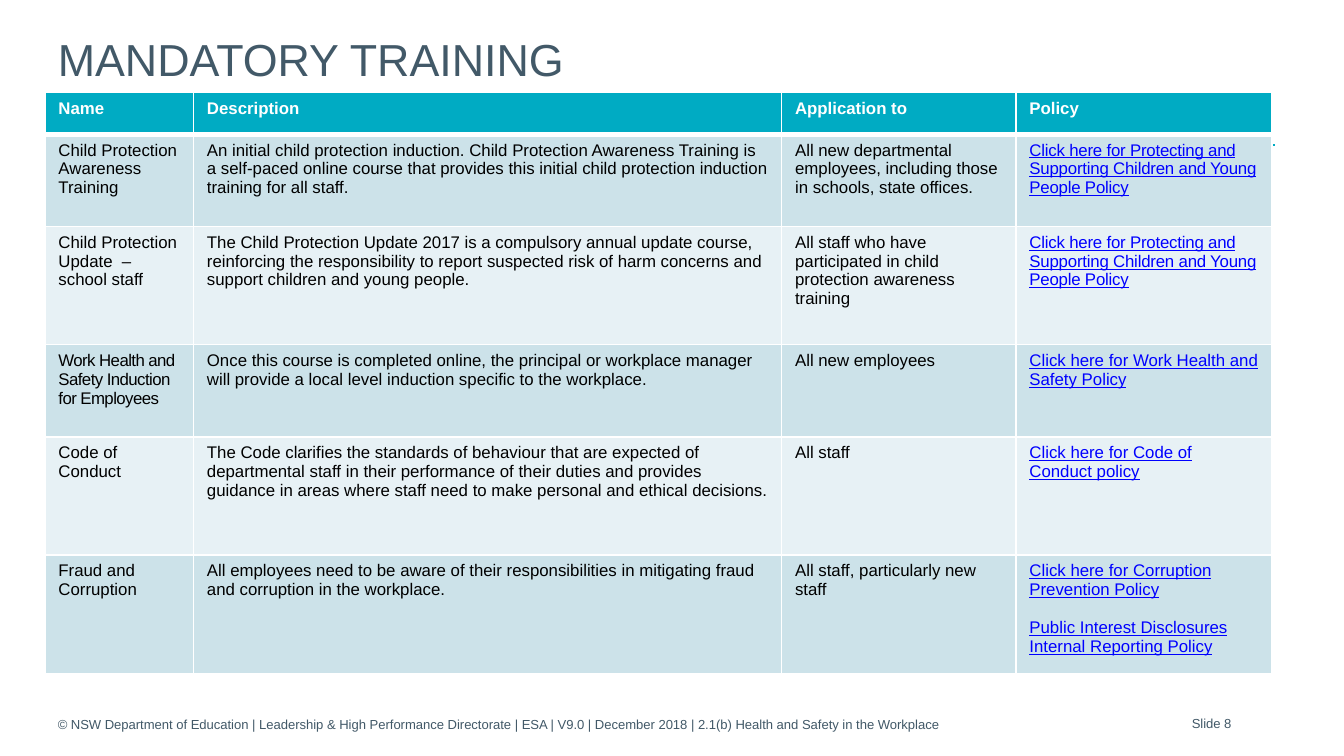
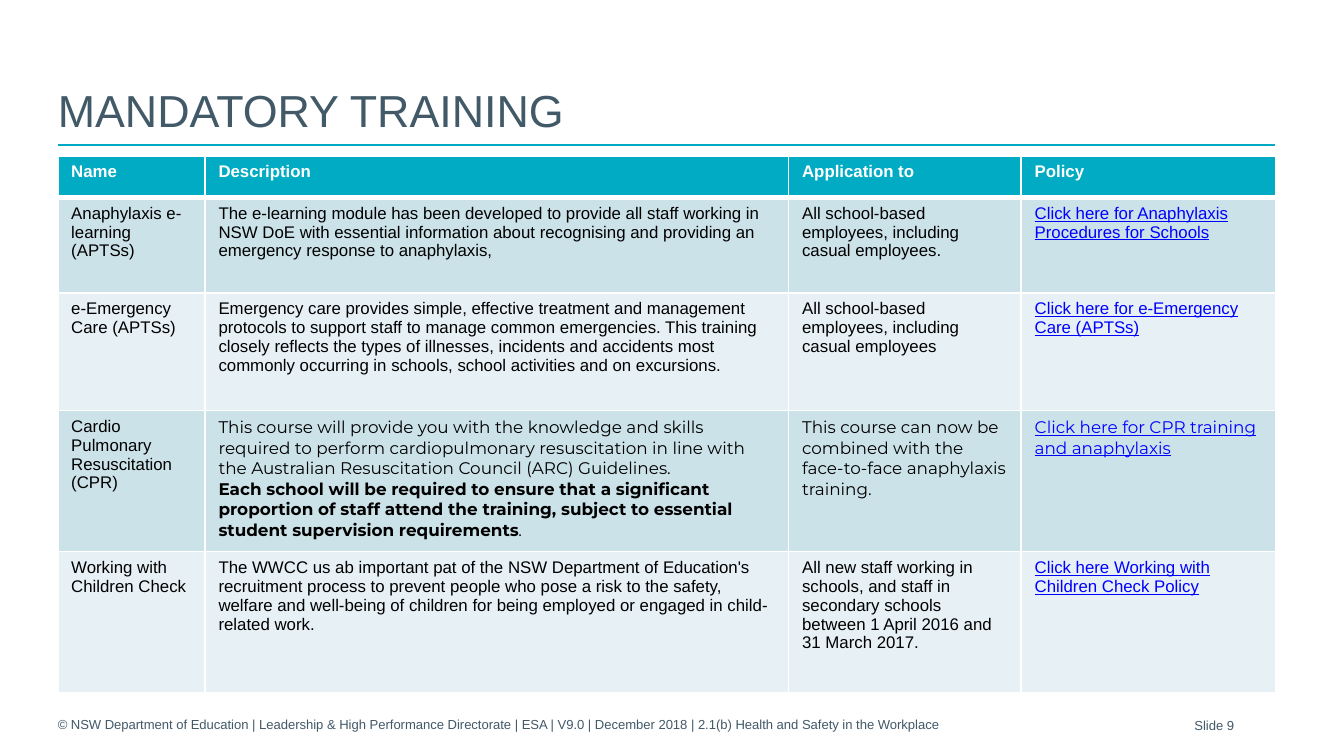
from dataclasses import dataclass
from typing import NamedTuple, Union

from lxml import etree
from pptx import Presentation
from pptx import util as u
from pptx.dml.color import RGBColor
from pptx.enum import shapes, text
from pptx.oxml import ns

SLIDE_WIDTH = u.Inches(10)
SLIDE_HEIGHT = SLIDE_WIDTH * 9 // 16
TITLE_ONLY = 5


@dataclass(frozen=True)
class Theme:
    teal: str = "00ABC3"
    slate: str = "425968"
    white: str = "FFFFFF"
    black: str = "000000"
    link: str = "0000FF"
    bands: tuple[str, ...] = ("CCE2E9", "E7F1F5")
    face: str = "Arial"
    course_face: str = "Montserrat"
    title_size: int = 24
    table_size: int = 9
    footer_size: int = 7
    hairline: int = 1
    header_line: int = 3


THEME = Theme()


class Area(NamedTuple):
    """A box in percent of the slide's width and height."""
    left: float
    top: float
    width: float
    height: float


class Emphasis(NamedTuple):
    strong: str
    rest: str


@dataclass(frozen=True)
class Copy:
    """Cell text that departs from the table's usual setting."""
    paragraphs: tuple[Union[str, Emphasis], ...]
    face: str = THEME.face
    tracking: float = 0


Content = Union[str, Copy]


class Course(NamedTuple):
    height: float
    name: Content
    description: Content
    application: Content
    policy: Content


@dataclass(frozen=True)
class TrainingSlide:
    number: int
    title: Area
    footer: Area
    page: Area
    table_left: float
    table_top: float
    table_width: float
    courses: tuple[Course, ...]


HEADINGS = ("Name", "Description", "Application to", "Policy")
COLUMN_SHARES = (12.1, 47.93, 19.1, 20.87)
HEADER_HEIGHT = 5.5
MARGIN, CONTENT_WIDTH, RULE_TOP = 4.3, 90.6, 19.2
TITLE = "MANDATORY TRAINING"
FOOTER = ("© NSW Department of Education | Leadership & High Performance Directorate"
          " | ESA | V9.0 | December 2018 | 2.1(b) Health and Safety in the Workplace")
CHILD_POLICY = Copy(("Click here for Protecting and Supporting Children and Young People Policy",),
                    tracking=-0.1)

SLIDES = (
    TrainingSlide(
        number=8,
        title=Area(MARGIN, 5.2, CONTENT_WIDTH, 6.95),
        footer=Area(MARGIN, 92.35, 74.8, 5.34),
        page=Area(85.2, 92.3, 9.9, 5.34),
        table_left=3.35, table_top=12.25, table_width=91.3,
        courses=(
            Course(12.2, "Child Protection Awareness Training",
                   "An initial child protection induction. Child Protection Awareness Training "
                   "is a self-paced online course that provides this initial child protection "
                   "induction training for all staff.",
                   "All new departmental employees, including those in schools, state offices.",
                   CHILD_POLICY),
            Course(15.64, "Child Protection Update  – school staff",
                   "The Child Protection Update 2017 is a compulsory annual update course, "
                   "reinforcing the responsibility to report suspected risk of harm concerns "
                   "and support children and young people.",
                   "All staff who have participated in child protection awareness training",
                   CHILD_POLICY),
            Course(12.2,
                   Copy(("Work Health and Safety Induction for Employees",), tracking=-0.3),
                   "Once this course is completed online, the principal or workplace manager "
                   "will provide a local level induction specific to the workplace.",
                   "All new employees",
                   "Click here for Work Health and Safety Policy"),
            Course(15.64, "Code of Conduct",
                   "The Code clarifies the standards of behaviour that are expected of "
                   "departmental staff in their performance of their duties and provides "
                   "guidance in areas where staff need to make personal and ethical decisions.",
                   "All staff",
                   "Click here for Code of Conduct policy"),
            Course(15.75, "Fraud and Corruption",
                   "All employees need to be aware of their responsibilities in mitigating "
                   "fraud and corruption in the workplace.",
                   "All staff, particularly new staff",
                   Copy(("Click here for Corruption Prevention Policy",
                         "Public Interest Disclosures Internal Reporting Policy"))),
        ),
    ),
    TrainingSlide(
        number=9,
        title=Area(MARGIN, 5.1, CONTENT_WIDTH, 13.88),
        footer=Area(MARGIN, 92.35, 70.9, 5.34),
        page=Area(85.4, 93.87, 9.9, 3.91),
        table_left=MARGIN, table_top=20.6, table_width=CONTENT_WIDTH,
        courses=(
            Course(12.67, "Anaphylaxis e-learning (APTSs)",
                   "The e-learning module has been developed to provide all staff working in "
                   "NSW DoE with essential information about recognising and providing an "
                   "emergency response to anaphylaxis,",
                   "All school-based employees, including casual employees.",
                   "Click here for Anaphylaxis Procedures for Schools"),
            Course(15.53, "e-Emergency Care (APTSs)",
                   "Emergency care provides simple, effective treatment and management "
                   "protocols to support staff to manage common emergencies. This training "
                   "closely reflects the types of illnesses, incidents and accidents most "
                   "commonly occurring in schools, school activities and on excursions.",
                   "All school-based employees, including casual employees",
                   "Click here for e-Emergency Care (APTSs)"),
            Course(18.69, "Cardio Pulmonary Resuscitation (CPR)",
                   Copy(("This course will provide you with the knowledge and skills required "
                         "to perform cardiopulmonary resuscitation in line with the Australian "
                         "Resuscitation Council (ARC) Guidelines.",
                         Emphasis("Each school will be required to ensure that a significant "
                                  "proportion of staff attend the training, subject to essential "
                                  "student supervision requirements", ".")),
                        THEME.course_face),
                   Copy(("This course can now be combined with the face-to-face anaphylaxis "
                         "training.",), THEME.course_face),
                   Copy(("Click here for CPR training and anaphylaxis",), THEME.course_face)),
            Course(18.69, "Working with Children Check",
                   "The WWCC us ab important pat of the NSW Department of Education's "
                   "recruitment process to prevent people who pose a risk to the safety, "
                   "welfare and well-being of children for being employed or engaged in "
                   "child-related work.",
                   "All new staff working in schools, and staff in secondary schools between "
                   "1 April 2016 and 31 March 2017.",
                   "Click here Working with Children Check Policy"),
        ),
    ),
)


def across(percent: float) -> int:
    return round(SLIDE_WIDTH * percent / 100)


def down(percent: float) -> int:
    return round(SLIDE_HEIGHT * percent / 100)


def place(area: Area) -> tuple[int, int, int, int]:
    return across(area.left), down(area.top), across(area.width), down(area.height)


def style(paragraph, size: int, color: str, face: str = THEME.face, bold: bool = False) -> None:
    font = paragraph.font
    font.name, font.size, font.bold = face, u.Pt(size), bold
    font.color.rgb = RGBColor.from_string(color)


def set_line(frame, words: str, size: int, align, flush_left: bool) -> None:
    """Fill a frame with one bottom-anchored line in the slate colour."""
    frame.word_wrap = True
    frame.auto_size = text.MSO_AUTO_SIZE.NONE
    frame.vertical_anchor = text.MSO_ANCHOR.BOTTOM
    if flush_left:
        frame.margin_left = 0
    frame.text = words
    line = frame.paragraphs[0]
    line.alignment = align
    style(line, size, THEME.slate)


def add_rule(slide) -> None:
    rule = slide.shapes.add_connector(
        shapes.MSO_CONNECTOR.STRAIGHT, across(MARGIN), down(RULE_TOP),
        across(MARGIN + CONTENT_WIDTH), down(RULE_TOP))
    rule.line.color.rgb = RGBColor.from_string(THEME.teal)
    rule.line.width = u.Pt(THEME.hairline)
    etree.SubElement(rule.element.spPr, ns.qn("a:effectLst"))


def finish_cell(cell, fill: str, top: int, bottom: int) -> None:
    """Border the cell in white, then fill it."""
    properties = cell._tc.get_or_add_tcPr()
    sides = {"L": THEME.hairline, "R": THEME.hairline, "T": top, "B": bottom}
    for side, points in sides.items():
        border = etree.SubElement(properties, ns.qn(f"a:ln{side}"), w=str(u.Pt(points)))
        paint = etree.SubElement(border, ns.qn("a:solidFill"))
        etree.SubElement(paint, ns.qn("a:srgbClr"), val=THEME.white)
    cell.fill.solid()
    cell.fill.fore_color.rgb = RGBColor.from_string(fill)


def write_cell(cell, content: Content, color: str, bold: bool = False) -> None:
    copy = Copy((content,)) if isinstance(content, str) else content
    frame = cell.text_frame
    for index, words in enumerate(copy.paragraphs):
        paragraph = frame.add_paragraph() if index else frame.paragraphs[0]
        style(paragraph, THEME.table_size, color, copy.face, bold)
        if color == THEME.link:
            paragraph.font.underline = True
            if index:
                paragraph.space_before = u.Pt(10)
        for part in (words,) if isinstance(words, str) else words:
            run = paragraph.add_run()
            run.text = part
            if isinstance(words, Emphasis):
                run.font.bold = part == words.strong
            if copy.tracking:
                run._r.get_or_add_rPr().set("spc", str(round(copy.tracking * 100)))


def add_courses(slide, plan: TrainingSlide) -> None:
    heights = (HEADER_HEIGHT, *(course.height for course in plan.courses))
    area = Area(plan.table_left, plan.table_top, plan.table_width, sum(heights))
    table = slide.shapes.add_table(len(heights), len(HEADINGS), *place(area)).table
    for column, share in zip(table.columns, COLUMN_SHARES):
        column.width = across(plan.table_width * share / 100)
    for row, height in zip(table.rows, heights):
        row.height = down(height)

    for cell, heading in zip(table.rows[0].cells, HEADINGS):
        write_cell(cell, heading, THEME.white, bold=True)
        finish_cell(cell, THEME.teal, THEME.hairline, THEME.header_line)
    inks = (THEME.black, THEME.black, THEME.black, THEME.link)
    for index, course in enumerate(plan.courses):
        band = THEME.bands[index % len(THEME.bands)]
        top = THEME.hairline if index else THEME.header_line
        for cell, content, ink in zip(table.rows[index + 1].cells, course[1:], inks):
            write_cell(cell, content, ink)
            finish_cell(cell, band, top, THEME.hairline)


def add_training_slide(deck, plan: TrainingSlide) -> None:
    slide = deck.slides.add_slide(deck.slide_layouts[TITLE_ONLY])
    title = slide.shapes.title
    title.left, title.top, title.width, title.height = place(plan.title)
    set_line(title.text_frame, TITLE, THEME.title_size, text.PP_ALIGN.LEFT, True)
    add_rule(slide)
    footer = slide.shapes.add_textbox(*place(plan.footer))
    set_line(footer.text_frame, FOOTER, THEME.footer_size, text.PP_ALIGN.LEFT, True)
    page = slide.shapes.add_textbox(*place(plan.page))
    set_line(page.text_frame, f"Slide {plan.number}", THEME.footer_size,
             text.PP_ALIGN.CENTER, False)
    add_courses(slide, plan)


def main() -> None:
    deck = Presentation()
    deck.slide_width, deck.slide_height = SLIDE_WIDTH, SLIDE_HEIGHT
    for plan in SLIDES:
        add_training_slide(deck, plan)
    deck.save("out.pptx")


if __name__ == "__main__":
    main()
